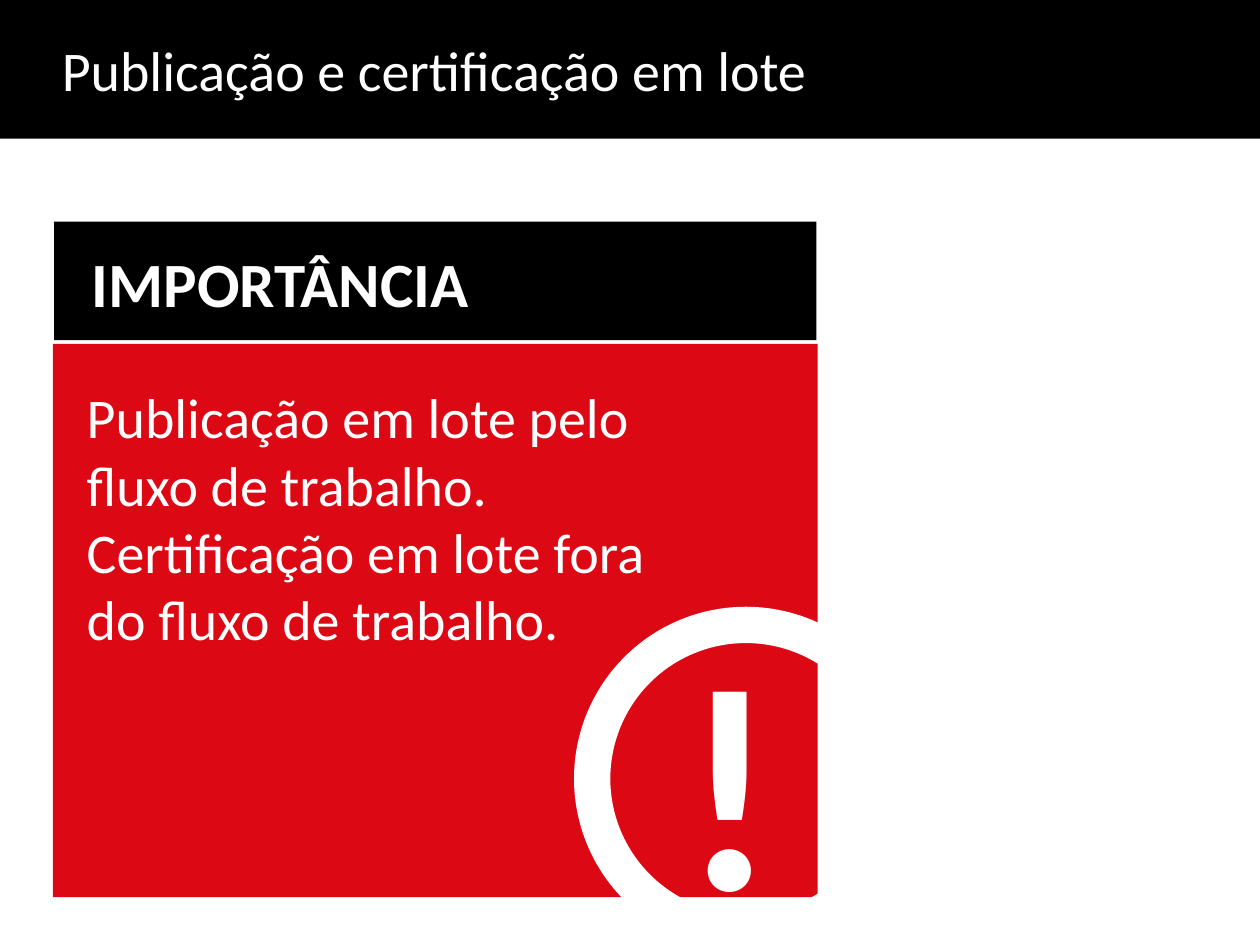
from dataclasses import dataclass

from pptx import Presentation
from pptx.dml.color import RGBColor
from pptx.enum.shapes import MSO_SHAPE as Shape
from pptx.enum.text import MSO_ANCHOR as Anchor, MSO_AUTO_SIZE as AutoSize, PP_ALIGN as Align
from pptx.util import Inches, Pt


@dataclass(frozen=True)
class Theme:
    font: str = "Calibri"
    black: RGBColor = RGBColor(0x00, 0x00, 0x00)
    red: RGBColor = RGBColor(0xDC, 0x08, 0x14)
    white: RGBColor = RGBColor(0xFF, 0xFF, 0xFF)
    body: float = 32
    heading: float = 36
    mark: float = 166
    ring: float = 20.75


THEME = Theme()


def box(*lengths):
    return [Inches(n) for n in lengths]


def write(tf, paragraphs, size, bold=False):
    for i, text in enumerate(paragraphs):
        p = tf.paragraphs[0] if i == 0 else tf.add_paragraph()
        p.alignment = Align.LEFT
        r = p.add_run()
        r.text = text
        r.font.name = THEME.font
        r.font.size = Pt(size)
        r.font.bold = bold
        r.font.color.rgb = THEME.white


def add_title(s, text):
    """Turn the title placeholder into the black band across the top."""
    sp = s.shapes.title
    sp.left, sp.top, sp.width, sp.height = box(0, 0, 10, 1.1)
    sp.fill.solid()
    sp.fill.fore_color.rgb = THEME.black
    tf = sp.text_frame
    tf.auto_size = AutoSize.NONE
    tf.word_wrap = True
    tf.vertical_anchor = Anchor.MIDDLE
    tf.margin_left, tf.margin_right = Inches(0.49), Inches(0.39)
    write(tf, [text], THEME.body)


def add_panel(s, at, color):
    sp = s.shapes.add_shape(Shape.RECTANGLE, *box(*at))
    sp.shadow.inherit = False
    sp.fill.solid()
    sp.fill.fore_color.rgb = color
    sp.line.fill.background()


def add_text(s, at, paragraphs, size, bold=False, wrap=True):
    tf = s.shapes.add_textbox(*box(*at)).text_frame
    tf.word_wrap = wrap
    tf.auto_size = AutoSize.SHAPE_TO_FIT_TEXT
    write(tf, paragraphs, size, bold)


def add_ring(s, at):
    sp = s.shapes.add_shape(Shape.OVAL, *box(*at))
    sp.shadow.inherit = False
    sp.fill.background()
    sp.line.color.rgb = THEME.white
    sp.line.width = Pt(THEME.ring)


def main():
    prs = Presentation()
    prs.slide_width, prs.slide_height = box(10, 7.5)
    s = prs.slides.add_slide(prs.slide_layouts[5])

    add_title(s, "Publicação e certificação em lote")
    add_panel(s, (0.43, 1.76, 6.05, 0.94), THEME.black)
    add_panel(s, (0.42, 2.73, 6.07, 4.39), THEME.red)
    add_text(s, (0.63, 1.89, 3.65, 0.7), ["IMPORTÂNCIA"], THEME.heading, bold=True)
    add_text(s, (0.59, 2.99, 4.93, 2.26), [
        "Publicação em lote pelo fluxo de trabalho.",
        "Certificação em lote fora do fluxo de trabalho.",
    ], THEME.body)
    add_ring(s, (4.7, 4.96, 2.44, 2.44))
    add_text(s, (5.32, 4.71, 0.79, 2.89), ["!"], THEME.mark, bold=True, wrap=False)

    prs.save("out.pptx")


if __name__ == "__main__":
    main()
